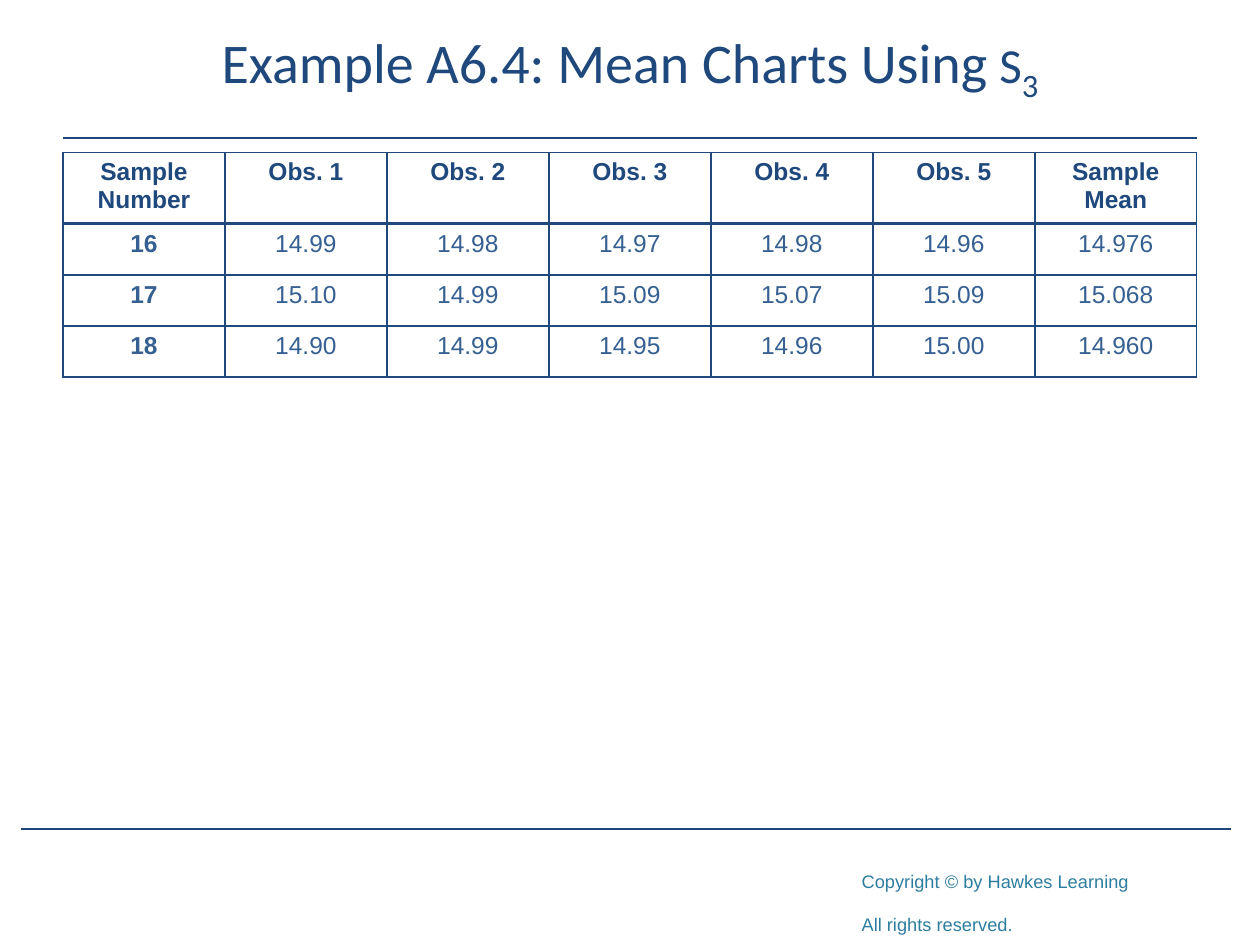
from typing import NamedTuple

from lxml import etree
from pptx import Presentation
from pptx.dml.color import RGBColor
from pptx.enum.shapes import MSO_CONNECTOR, MSO_SHAPE
from pptx.enum.text import MSO_ANCHOR, PP_ALIGN
from pptx.oxml.ns import qn
from pptx.util import Cm, Pt

NAVY = RGBColor(0x1F, 0x49, 0x7D)
RULE_BLUE = RGBColor(0x1C, 0x47, 0x7C)
BODY_BLUE = RGBColor(0x36, 0x60, 0x92)
TEAL = RGBColor(0x2D, 0x7D, 0x9F)
WHITE = RGBColor(0xFF, 0xFF, 0xFF)

CENTER, LEFT = PP_ALIGN.CENTER, PP_ALIGN.LEFT
MIDDLE, TOP = MSO_ANCHOR.MIDDLE, MSO_ANCHOR.TOP
STRAIGHT = MSO_CONNECTOR.STRAIGHT
RECTANGLE = MSO_SHAPE.RECTANGLE

MARGIN = 1.27
CONTENT_WIDTH = 22.86
HEADER_HEIGHT = 1.37
ROW_HEIGHT = 1.03
SUBSCRIPT = "-25000"


class Rule(NamedTuple):
    left: float
    right: float
    y: float


class TitlePart(NamedTuple):
    text: str
    size: int
    subscript: bool = False


RULES = [Rule(1.27, 24.13, 2.79), Rule(0.43, 24.82, 16.71)]

TITLE = [
    TitlePart("Example A6.4: Mean Charts Using", 32),
    TitlePart(" S", 28),
    TitlePart("3", 32, True),
]

COPYRIGHT = ["Copyright © by Hawkes Learning", "All rights reserved."]

SAMPLES = [
    ["Sample Number", "Obs. 1", "Obs. 2", "Obs. 3", "Obs. 4", "Obs. 5", "Sample Mean"],
    ["16", "14.99", "14.98", "14.97", "14.98", "14.96", "14.976"],
    ["17", "15.10", "14.99", "15.09", "15.07", "15.09", "15.068"],
    ["18", "14.90", "14.99", "14.95", "14.96", "15.00", "14.960"],
]


def add_run(paragraph, text: str, color: RGBColor, subscript: bool = False, **style) -> None:
    run = paragraph.add_run()
    run.text = text
    for name, value in style.items():
        setattr(run.font, name, value)
    run.font.color.rgb = color
    if subscript:
        run.font._element.set("baseline", SUBSCRIPT)


def add_rule(slide, rule: Rule) -> None:
    line = slide.shapes.add_connector(
        STRAIGHT, Cm(rule.left), Cm(rule.y), Cm(rule.right), Cm(rule.y))
    line.line.color.rgb = RULE_BLUE
    line.line.width = Pt(1.25)
    etree.SubElement(line._element.spPr, qn("a:effectLst"))


def add_border(cell, side: str, width: float) -> None:
    border = etree.SubElement(
        cell._tc.get_or_add_tcPr(), qn(f"a:ln{side}"), w=str(Pt(width)))
    fill = etree.SubElement(border, qn("a:solidFill"))
    etree.SubElement(fill, qn("a:srgbClr"), val=str(NAVY))


def add_copyright(slide) -> None:
    box = slide.shapes.add_shape(RECTANGLE, Cm(17.12), Cm(16.26), Cm(7.82), Cm(2.74))
    box.shadow.inherit = False
    box.fill.solid()
    box.fill.fore_color.rgb = WHITE
    box.line.fill.background()
    frame = box.text_frame
    frame.word_wrap = True
    frame.vertical_anchor = TOP
    frame.margin_top = Cm(0.86)
    for index, text in enumerate(COPYRIGHT):
        paragraph = frame.paragraphs[0] if index == 0 else frame.add_paragraph()
        paragraph.alignment = LEFT
        add_run(paragraph, text, TEAL, subscript=True, name="Arial", size=Pt(18))


def add_title(slide) -> None:
    box = slide.shapes.add_textbox(Cm(MARGIN), Cm(0.3), Cm(CONTENT_WIDTH), Cm(2.54))
    frame = box.text_frame
    frame.word_wrap = True
    frame.vertical_anchor = MIDDLE
    paragraph = frame.paragraphs[0]
    paragraph.alignment = CENTER
    paragraph.line_spacing = Pt(30)
    for part in TITLE:
        add_run(paragraph, part.text, NAVY, part.subscript,
                name="Calibri", size=Pt(part.size))


def add_sample_table(slide) -> None:
    row_count, column_count = len(SAMPLES), len(SAMPLES[0])
    height = HEADER_HEIGHT + ROW_HEIGHT * (row_count - 1)
    table = slide.shapes.add_table(
        row_count, column_count,
        Cm(MARGIN), Cm(3.07), Cm(CONTENT_WIDTH), Cm(height)).table
    table.first_row = False
    table.horz_banding = False
    for column in table.columns:
        column.width = Cm(CONTENT_WIDTH / column_count)
    for row_index, values in enumerate(SAMPLES):
        is_header = row_index == 0
        table.rows[row_index].height = Cm(HEADER_HEIGHT if is_header else ROW_HEIGHT)
        # The line below the header is twice as thick as the others
        borders = {"L": 1, "R": 1, "T": 2 if row_index == 1 else 1, "B": 2 if is_header else 1}
        for column_index, text in enumerate(values):
            cell = table.cell(row_index, column_index)
            for side, width in borders.items():
                add_border(cell, side, width)
            cell.fill.background()
            paragraph = cell.text_frame.paragraphs[0]
            paragraph.alignment = CENTER
            add_run(paragraph, text, NAVY if is_header else BODY_BLUE,
                    name="Arial", size=Pt(14), bold=is_header or column_index == 0)


def main() -> None:
    presentation = Presentation()
    presentation.slide_width = Cm(25.4)
    presentation.slide_height = Cm(19.05)
    slide = presentation.slides.add_slide(presentation.slide_layouts[6])

    # Footer and rules
    add_copyright(slide)
    for rule in RULES:
        add_rule(slide, rule)

    # Title and sample data
    add_title(slide)
    add_sample_table(slide)

    presentation.save("out.pptx")


if __name__ == "__main__":
    main()
